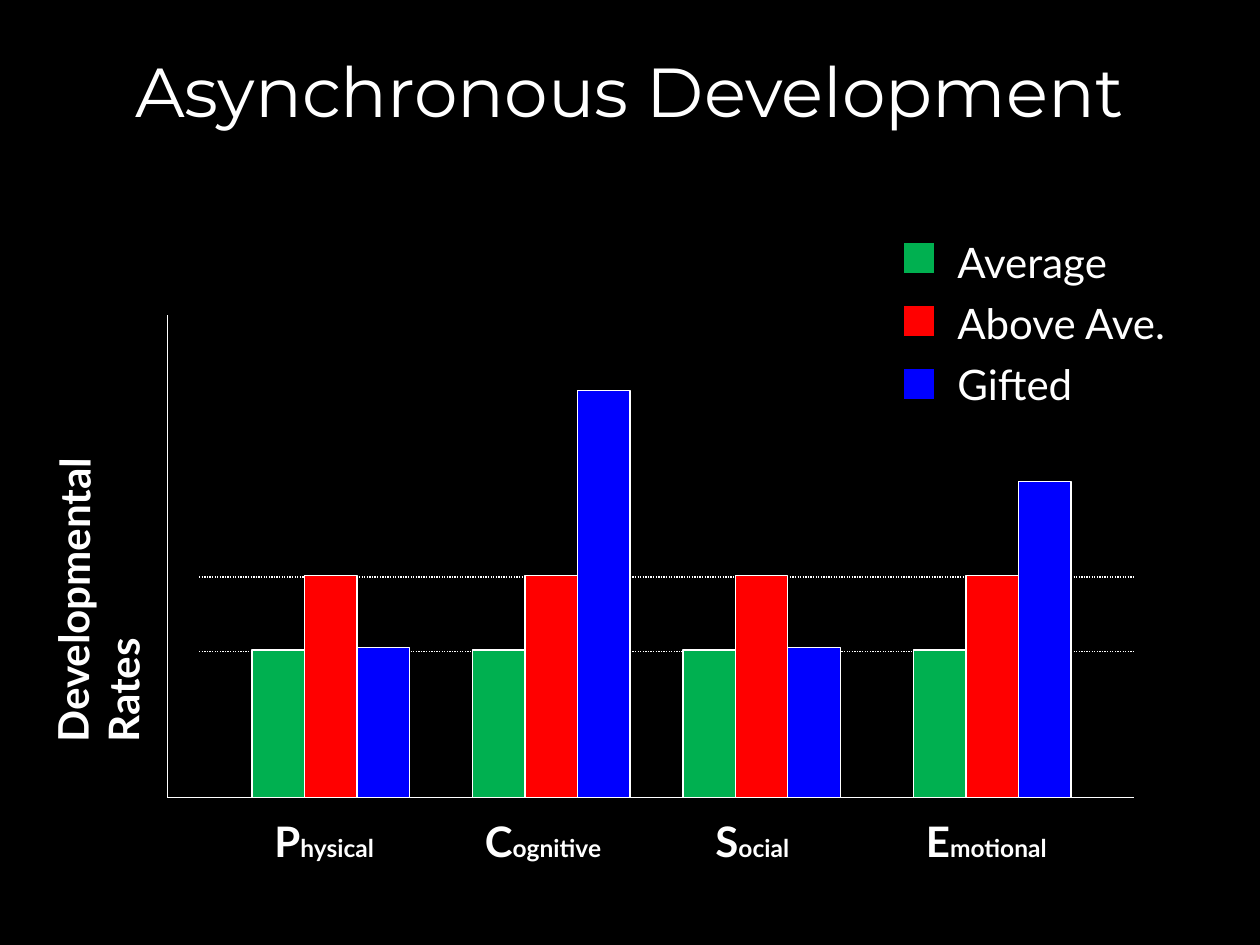
from pptx import Presentation
from pptx.dml.color import RGBColor
from pptx.enum.dml import MSO_LINE_DASH_STYLE as Dash
from pptx.enum.shapes import MSO_CONNECTOR as Connector, MSO_SHAPE as Shape
from pptx.enum.text import MSO_ANCHOR as Anchor, PP_ALIGN as Align
from pptx.oxml.ns import qn
from pptx.util import Inches, Pt
from lxml import etree

COLORS = {"black": "000000", "white": "FFFFFF", "green": "00B050",
          "red": "FF0000", "blue": "0000FF"}
TITLE = "Asynchronous Development"
AXIS_TITLE = "Developmental Rates"

# Name, left of the bars, label left, label width
CATEGORIES = [
    ("Physical", 2, 2.08, 1.17),
    ("Cognitive", 3.75, 3.75, 1.25),
    ("Social", 5.42, 5.58, 0.88),
    ("Emotional", 7.25, 7.25, 1.33),
]
# Name, colour, bar height in each category
SERIES = [
    ("Average", "green", [1.17, 1.17, 1.17, 1.17]),
    ("Above Ave.", "red", [1.76, 1.76, 1.76, 1.76]),
    ("Gifted", "blue", [1.19, 3.23, 1.19, 2.51]),
]
AXIS_LEFT, AXIS_RIGHT, AXIS_TOP, BASE = 1.33, 9, 2.5, 6.33
GUIDE_LEFT, GUIDES = 1.58, [5.17, 4.58]
BAR_WIDTH = 5 / 12
LABEL_TOP = 6.42
KEY_LEFT, KEY_TOP, KEY_STEP, KEY_SIZE = 7.17, 1.92, 0.5, 0.25


def color(name):
    return RGBColor.from_string(COLORS[name])


def add_line(x1, y1, x2, y2, dash=None):
    line = page.shapes.add_connector(
        Connector.STRAIGHT, Inches(x1), Inches(y1), Inches(x2), Inches(y2))
    line.line.color.rgb = color("white")
    line.line.width = Pt(0.75)
    if dash:
        line.line.dash_style = dash
    etree.SubElement(line._element.spPr, qn("a:effectLst"))


def add_block(left, top, width, height, fill, outline):
    block = page.shapes.add_shape(
        Shape.RECTANGLE, Inches(left), Inches(top), Inches(width), Inches(height))
    block.shadow.inherit = False
    block.fill.solid()
    block.fill.fore_color.rgb = color(fill)
    block.line.color.rgb = color(outline)
    block.line.width = Pt(0.75)


def add_text(left, top, width, height, lines, size=24, font="Lato", bold=False):
    """Each line is a list of (text, size) spans; None keeps the line's size."""
    box = page.shapes.add_textbox(
        Inches(left), Inches(top), Inches(width), Inches(height))
    frame = box.text_frame
    frame.word_wrap = True
    for i, spans in enumerate(lines):
        para = frame.add_paragraph() if i else frame.paragraphs[0]
        para.font.name, para.font.size, para.font.bold = font, Pt(size), bold
        para.font.color.rgb = color("white")
        for text, span_size in spans:
            span = para.add_run()
            span.text = text
            if span_size:
                span.font.size = Pt(span_size)
    return box


deck = Presentation()
deck.slide_width, deck.slide_height = Inches(10), Inches(7.5)
page = deck.slides.add_slide(deck.slide_layouts[6])
page.background.fill.solid()
page.background.fill.fore_color.rgb = color("black")

# Axes, axis title and guides
add_line(AXIS_LEFT, BASE, AXIS_RIGHT, BASE)
add_line(AXIS_LEFT, BASE, AXIS_LEFT, AXIS_TOP)
axis_title = add_text(-0.87, 3.88, 3.31, 0.91, [[(AXIS_TITLE, None)]], bold=True)
axis_title.rotation = 270.3
for y in GUIDES:
    add_line(GUIDE_LEFT, y, AXIS_RIGHT, y, Dash.ROUND_DOT)

# Category labels with a large initial
for name, _, left, width in CATEGORIES:
    add_text(left, LABEL_TOP, width, 0.5, [[(name[0], None), (name[1:], 14)]], bold=True)

# Bars and legend keys
for i, (_, fill, heights) in enumerate(SERIES):
    for (_, left, _, _), height in zip(CATEGORIES, heights):
        add_block(left + i * BAR_WIDTH, BASE - height, BAR_WIDTH, height, fill, "white")
    add_block(KEY_LEFT, KEY_TOP + i * KEY_STEP, KEY_SIZE, KEY_SIZE, fill, "black")

# Legend text
legend = add_text(7.5, 1.83, 2, 1.5, [[(name, None)] for name, _, _ in SERIES])
for para in legend.text_frame.paragraphs:
    para.space_before = Pt(6)

# Title
title = add_text(0.33, 0.25, 9.33, 0.92, [[(TITLE, None)]], 39.6, "Montserrat")
title.text_frame.vertical_anchor = Anchor.MIDDLE
title.text_frame.paragraphs[0].alignment = Align.CENTER

deck.save("out.pptx")
